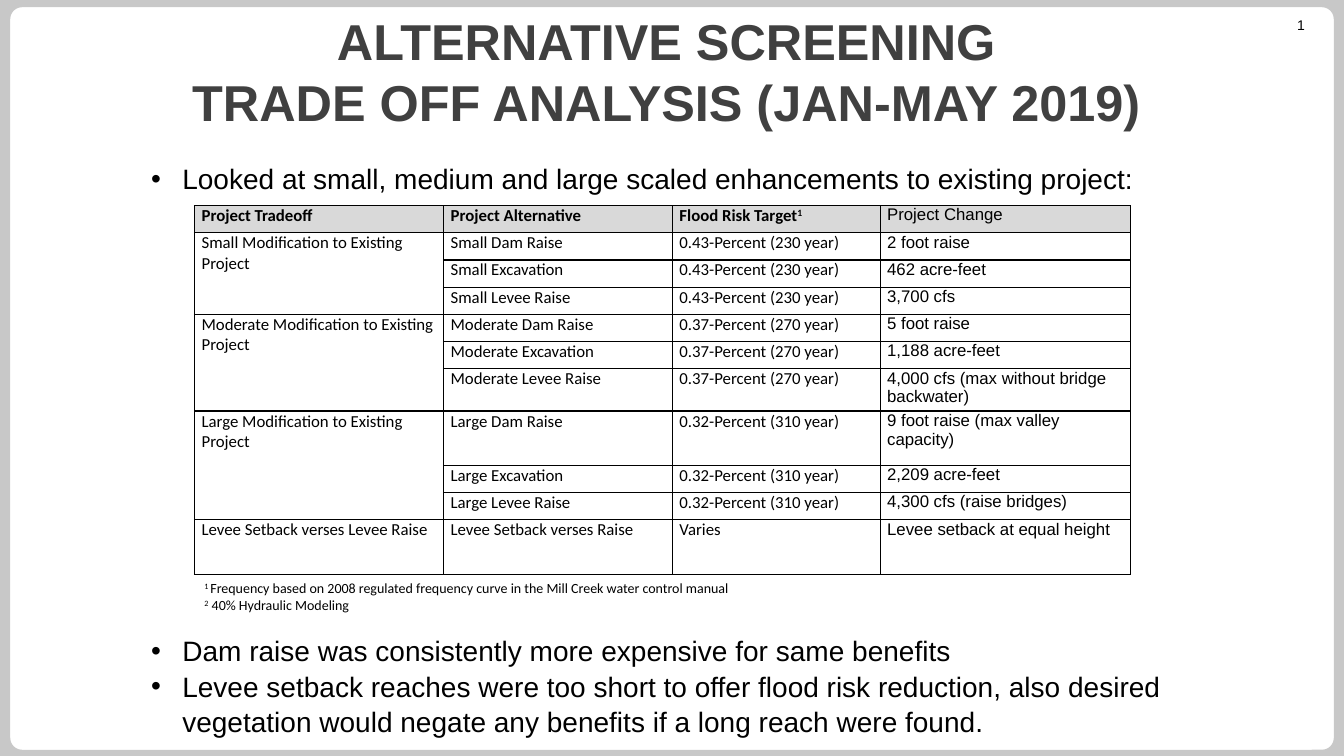
from lxml.etree import SubElement
from pptx import Presentation
from pptx.dml.color import RGBColor
from pptx.enum.shapes import MSO_SHAPE
from pptx.enum.text import MSO_ANCHOR, PP_ALIGN
from pptx.oxml.ns import qn
from pptx.util import Inches, Pt

BLACK = "000000"
TITLE = "ALTERNATIVE SCREENING\vTRADE OFF ANALYSIS (JAN-MAY 2019)"
BULLETS = [
    ("Looked at small, medium and large scaled enhancements to existing project:", 0),
    ("Dam raise was consistently more expensive for same benefits", 312),
    ("Levee setback reaches were too short to offer flood risk reduction, also desired "
     "vegetation would negate any benefits if a long reach were found.", 0),
]
HEADER = ["Project Tradeoff", "Project Alternative", "Flood Risk Target", "Project Change"]
SCALES = [
    ("Small", "0.43-Percent (230 year)", ["2 foot raise", "462 acre-feet", "3,700 cfs"]),
    ("Moderate", "0.37-Percent (270 year)",
     ["5 foot raise", "1,188 acre-feet", "4,000 cfs (max without bridge backwater)"]),
    ("Large", "0.32-Percent (310 year)",
     ["9 foot raise (max valley capacity)", "2,209 acre-feet", "4,300 cfs (raise bridges)"]),
]
MEASURES = ["Dam Raise", "Excavation", "Levee Raise"]
SETBACK = ["Levee Setback verses Levee Raise", "Levee Setback verses Raise",
           "Varies", "Levee setback at equal height"]
COL_WIDTHS = [2.47, 2.27, 2.06, 2.48]
ROW_HEIGHTS = [0.27] * 6 + [0.42, 0.54, 0.27, 0.27, 0.54]
FOOTNOTES = [
    ("1 ", "Frequency based on 2008 regulated frequency curve in the Mill Creek water control manual"),
    ("2", " 40% Hydraulic Modeling"),
]


def rgb(value):
    """Turn a hex string into a colour."""
    return RGBColor.from_string(value)


def add_run(p, text, size, name="Arial", color=BLACK, bold=False, raised=False):
    """Add a formatted run, optionally superscript."""
    r = p.add_run()
    r.text = text
    for key, value in {"size": Pt(size), "name": name, "bold": bold}.items():
        setattr(r.font, key, value)
    r.font.color.rgb = rgb(color)
    if raised:
        r.font._element.set("baseline", "30000")
    return r


def add_text_box(s, left, top, width, height, **frame):
    """Add a wrapping text box and return its text frame."""
    sp = s.shapes.add_textbox(Inches(left), Inches(top), Inches(width), Inches(height))
    tf = sp.text_frame
    for key, value in {"word_wrap": True, **frame}.items():
        setattr(tf, key, value)
    return tf


def paragraphs(tf, items):
    """Yield one paragraph of the frame with each item."""
    for i, item in enumerate(items):
        yield (tf.add_paragraph() if i else tf.paragraphs[0]), item


def add_panel(s):
    """Paint the grey background and the rounded white panel."""
    s.background.fill.solid()
    s.background.fill.fore_color.rgb = rgb("C8C8C8")
    sp = s.shapes.add_shape(MSO_SHAPE.ROUNDED_RECTANGLE, Inches(0.07), Inches(0.04),
                            Inches(13.19), Inches(7.43))
    sp.adjustments[0] = 0.02
    sp.shadow.inherit = False
    sp.fill.solid()
    sp.fill.fore_color.rgb = rgb("FFFFFF")
    sp.line.color.rgb = rgb("C8C8C8")
    sp.line.width = Pt(4.5)
    s.shapes._spTree.insert(2, sp._element)


def add_title(s):
    """Place and format the title placeholder."""
    sp = s.shapes.title
    place = {"left": 1.04, "top": 0.14, "width": 11.14, "height": 1.13}
    for key, value in place.items():
        setattr(sp, key, Inches(value))
    tf = sp.text_frame
    tf.vertical_anchor = MSO_ANCHOR.MIDDLE
    p = tf.paragraphs[0]
    p.alignment = PP_ALIGN.CENTER
    for i, line in enumerate(TITLE.split("\v")):
        if i:
            p.add_line_break()
        add_run(p, line, 36, color="404040", bold=True)


def add_slide_number(s):
    """Add the slide number field at the top right."""
    tf = add_text_box(s, 12.2, 0.16, 0.84, 0.17, margin_top=0, margin_bottom=0)
    p = tf.paragraphs[0]
    p.alignment = PP_ALIGN.RIGHT
    r = add_run(p, "4", 10)._r
    r.tag = qn("a:fld")
    r.set("id", "{B6F15528-21DE-4FAA-801E-634DDDAF4B2B}")
    r.set("type", "slidenum")


def add_bullets(s):
    """Add the bullet points, leaving room for the table."""
    tf = add_text_box(s, 1.4, 1.54, 10.89, 5.9)
    for p, (text, before) in paragraphs(tf, BULLETS):
        p.line_spacing = 1.05
        p.space_before = Pt(before)
        pPr = p._p.get_or_add_pPr()
        pPr.set("marL", str(Inches(0.31)))
        pPr.set("indent", str(-Inches(0.31)))
        SubElement(pPr, qn("a:buFont"), typeface="Arial")
        SubElement(pPr, qn("a:buChar"), char="•")
        add_run(p, text, 20)


def border_cell(cell):
    """Draw a black line on all four sides of a cell."""
    tcPr = cell._tc.get_or_add_tcPr()
    for i, side in enumerate(("a:lnL", "a:lnR", "a:lnT", "a:lnB")):
        ln = tcPr.makeelement(qn(side), {"w": str(Pt(1))})
        SubElement(SubElement(ln, qn("a:solidFill")), qn("a:srgbClr"), val=BLACK)
        tcPr.insert(i, ln)


def format_cell(cell, text, row, col):
    """Fill, border and write one table cell."""
    margins = {"margin_left": 0.07, "margin_right": 0.07, "margin_top": 0, "margin_bottom": 0}
    for key, value in margins.items():
        setattr(cell, key, Inches(value))
    if row == 0:
        cell.fill.solid()
        cell.fill.fore_color.rgb = rgb("D9D9D9")
    else:
        cell.fill.background()
    border_cell(cell)
    if text:
        p = cell.text_frame.paragraphs[0]
        name = "Arial" if col == 3 else "Calibri"
        bold = row == 0 and col < 3
        add_run(p, text, 12, name, bold=bold)
        if row == 0 and col == 2:
            add_run(p, "1", 12, name, bold=bold, raised=True)


def add_tradeoff_table(s):
    """Build the table of project alternatives."""
    rows = [HEADER]
    for scale, target, changes in SCALES:
        for i, (measure, change) in enumerate(zip(MEASURES, changes)):
            label = "" if i else f"{scale} Modification to Existing Project"
            rows.append([label, f"{scale} {measure}", target, change])
    rows.append(SETBACK)
    table = s.shapes.add_table(len(rows), len(HEADER), Inches(1.93), Inches(2.04),
                               Inches(sum(COL_WIDTHS)), Inches(sum(ROW_HEIGHTS))).table
    table.first_row = table.horz_banding = False
    for column, width in zip(table.columns, COL_WIDTHS):
        column.width = Inches(width)
    for row, height in zip(table.rows, ROW_HEIGHTS):
        row.height = Inches(height)
    for i, row in enumerate(rows):
        for j, text in enumerate(row):
            format_cell(table.cell(i, j), text, i, j)
    for top in range(1, 10, len(MEASURES)):
        table.cell(top, 0).merge(table.cell(top + len(MEASURES) - 1, 0))


def add_footnotes(s):
    """Add the numbered notes under the table."""
    tf = add_text_box(s, 1.93, 5.7, 10.57, 0.44, vertical_anchor=MSO_ANCHOR.MIDDLE)
    for p, (mark, note) in paragraphs(tf, FOOTNOTES):
        add_run(p, mark, 10, "Calibri", raised=True)
        add_run(p, note, 10, "Calibri")


def main():
    """Build the slide and save it."""
    prs = Presentation()
    prs.slide_width, prs.slide_height = Inches(13.33), Inches(7.5)
    s = prs.slides.add_slide(prs.slide_layouts[5])
    add_panel(s)
    add_slide_number(s)
    add_title(s)
    add_bullets(s)
    add_tradeoff_table(s)
    add_footnotes(s)
    prs.save("out.pptx")


if __name__ == "__main__":
    main()
